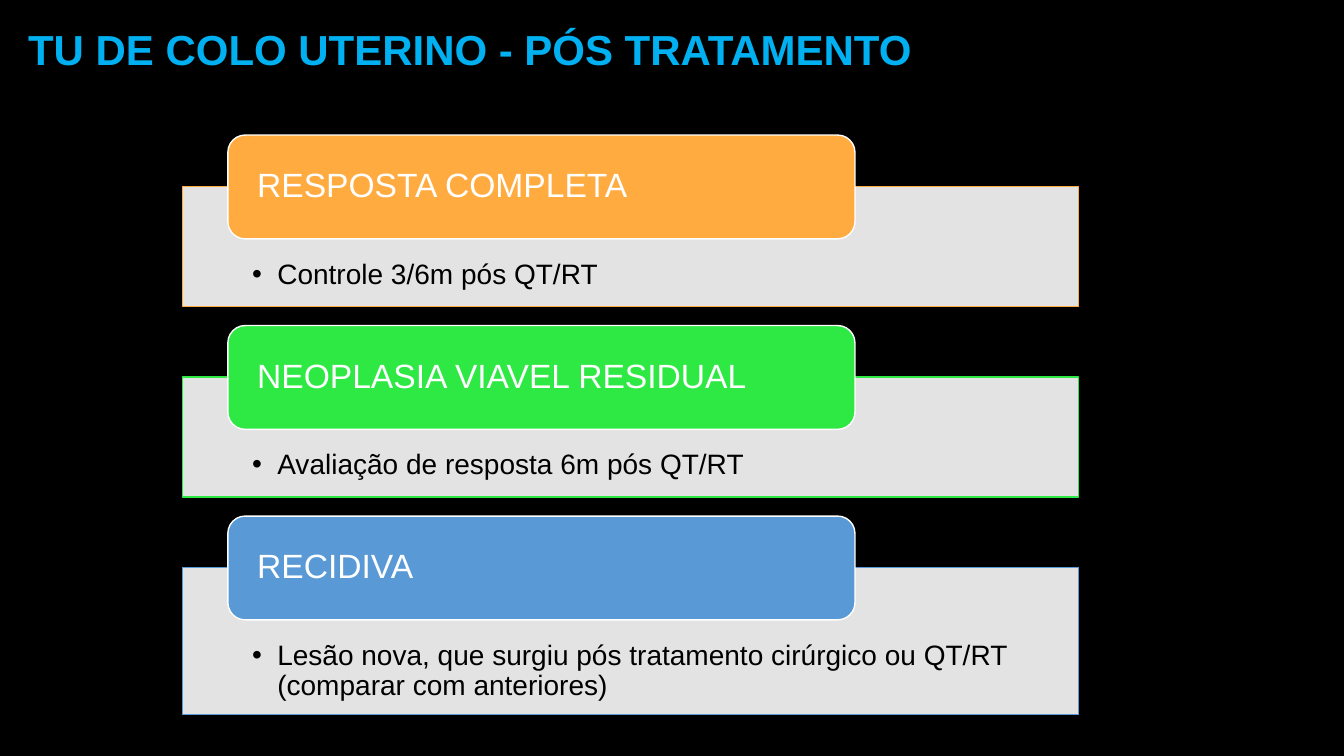
from lxml.etree import SubElement
from pptx import Presentation
from pptx.dml.color import RGBColor
from pptx.enum.shapes import MSO_SHAPE
from pptx.enum.text import MSO_ANCHOR, PP_ALIGN
from pptx.oxml.ns import qn
from pptx.util import Inches, Pt

# Content
BLACK = RGBColor(0x00, 0x00, 0x00)
WHITE = RGBColor(0xFF, 0xFF, 0xFF)
CYAN = RGBColor(0x00, 0xB0, 0xF0)
ORANGE = RGBColor(0xFF, 0xAB, 0x40)
GREEN = RGBColor(0x2E, 0xE8, 0x44)
BLUE = RGBColor(0x59, 0x99, 0xD5)

TITLE = "TU DE COLO UTERINO - PÓS TRATAMENTO"
# Heading, detail, colour, panel height
OUTCOMES = [
    ("RESPOSTA COMPLETA", "Controle 3/6m pós QT/RT", ORANGE, 1.19),
    ("NEOPLASIA VIAVEL RESIDUAL", "Avaliação de resposta 6m pós QT/RT", GREEN, 1.19),
    ("RECIDIVA",
     "Lesão nova, que surgiu pós tratamento cirúrgico ou QT/RT (comparar com anteriores)",
     BLUE, 1.46),
]

# Layout in inches
PANEL_LEFT, PANEL_WIDTH, FIRST_TOP, PANEL_GAP = 1.81, 8.89, 1.85, 0.7
HEADING_LEFT, HEADING_WIDTH, HEADING_HEIGHT, HEADING_RISE = 2.26, 6.22, 1.03, 0.51


def add_block(page, preset, area, fill, line):
    block = page.shapes.add_shape(preset, *[Inches(value) for value in area])
    block.shadow.inherit = False
    block.fill.solid()
    block.fill.fore_color.rgb = fill
    block.line.color.rgb = line
    block.line.width = Pt(1)
    return block


def write(shape, text, size, color, insets, anchor, bold=False, bullet=False):
    frame = shape.text_frame
    frame.word_wrap = True
    frame.vertical_anchor = anchor
    (frame.margin_left, frame.margin_top,
     frame.margin_right, frame.margin_bottom) = [Inches(value) for value in insets]
    para = frame.paragraphs[0]
    para.alignment = PP_ALIGN.LEFT
    para.line_spacing = 0.9
    if bullet:
        properties = para._p.get_or_add_pPr()
        properties.set("marL", str(Inches(0.25)))
        properties.set("indent", str(-Inches(0.25)))
        bullet_color = SubElement(properties, qn("a:buClr"))
        SubElement(bullet_color, qn("a:srgbClr"), val=str(color))
        SubElement(properties, qn("a:buFont"), typeface="Arial")
        SubElement(properties, qn("a:buChar"), char="•")
    span = para.add_run()
    span.text = text
    span.font.name = "Arial"
    span.font.size = Pt(size)
    span.font.bold = bold
    span.font.color.rgb = color


def main():
    deck = Presentation()
    deck.slide_width, deck.slide_height = Inches(13.33), Inches(7.5)
    page = deck.slides.add_slide(deck.slide_layouts[6])
    page.background.fill.solid()
    page.background.fill.fore_color.rgb = BLACK

    # Title
    title = page.shapes.add_textbox(Inches(0.18), Inches(0.15), Inches(9.72), Inches(0.69))
    write(title, TITLE, 30, CYAN, (0.1, 0.1, 0.1, 0.1), MSO_ANCHOR.BOTTOM, bold=True)

    # Panels, each with a heading over its top edge
    top = FIRST_TOP
    for heading, detail, color, height in OUTCOMES:
        panel = add_block(page, MSO_SHAPE.RECTANGLE,
                          (PANEL_LEFT, top, PANEL_WIDTH, height), WHITE, color)
        panel_color = panel.fill._xPr.find(qn("a:solidFill"))[0]
        SubElement(panel_color, qn("a:alpha"), val="89000")
        write(panel, detail, 20, BLACK, (0.69, 0.73, 0.69, 0.16),
              MSO_ANCHOR.TOP, bullet=True)

        label = add_block(page, MSO_SHAPE.ROUNDED_RECTANGLE,
                          (HEADING_LEFT, top - HEADING_RISE, HEADING_WIDTH, HEADING_HEIGHT),
                          color, WHITE)
        write(label, heading, 24, WHITE, (0.24, 0, 0.24, 0), MSO_ANCHOR.MIDDLE)
        top += height + PANEL_GAP

    deck.save("out.pptx")


if __name__ == "__main__":
    main()
